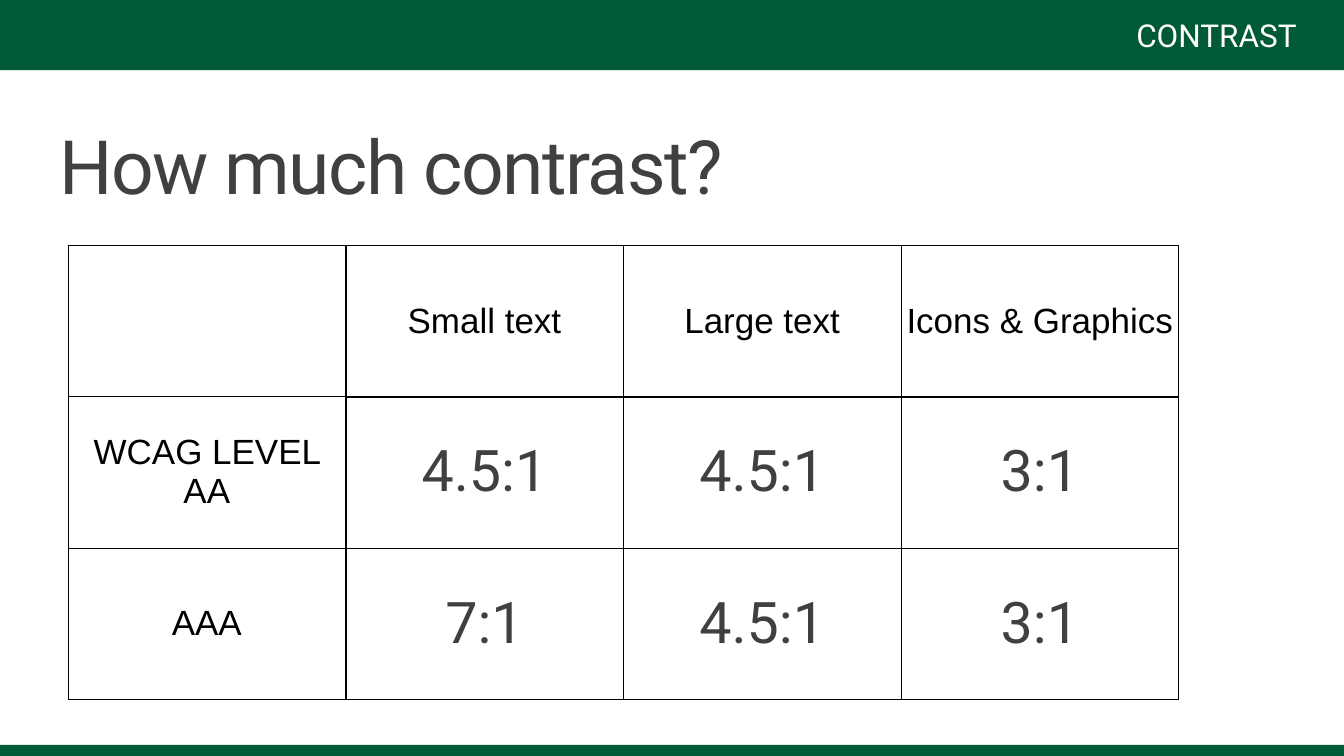
from lxml import etree
from pptx import Presentation
from pptx.dml.color import RGBColor
from pptx.enum.shapes import MSO_SHAPE
from pptx.enum.text import MSO_ANCHOR, MSO_AUTO_SIZE, PP_ALIGN
from pptx.oxml.ns import qn
from pptx.util import Pt

RECT = MSO_SHAPE.RECTANGLE
MIDDLE = MSO_ANCHOR.MIDDLE
GROW = MSO_AUTO_SIZE.SHAPE_TO_FIT_TEXT
LEFT, CENTER = PP_ALIGN.LEFT, PP_ALIGN.CENTER

EMU_PER_PX = 9144
WIDTH, HEIGHT = 2667, 1500
COLORS = {"green": "005A38", "grey": "404040", "black": "000000", "white": "FFFFFF"}
FORMATS = {
    "title": {"name": "Roboto", "size": Pt(107), "color": "grey"},
    "section": {"name": "Roboto", "size": Pt(45), "color": "white"},
    "label": {"name": "Arial", "size": Pt(50), "color": "black"},
    "ratio": {"name": "Roboto", "size": Pt(82), "color": "grey"},
}
ROWS = [
    ["", "Small text", "Large text", "Icons & Graphics"],
    ["WCAG LEVEL AA", "4.5:1", "4.5:1", "3:1"],
    ["AAA", "7:1", "4.5:1", "3:1"],
]


def px(value):
    return value * EMU_PER_PX


def rgb(name):
    return RGBColor.from_string(COLORS[name])


class SlideBuilder:
    margin = 6
    thin, thick = Pt(1), Pt(3)

    def __init__(self, prs):
        self.slide = prs.slides.add_slide(prs.slide_layouts[5])
        fill = self.slide.background.fill
        fill.solid()
        fill.fore_color.rgb = rgb("white")

    def set_margins(self, target):
        for side in ("left", "top", "right", "bottom"):
            setattr(target, f"margin_{side}", px(self.margin))

    def fill_text(self, tf, text, style, align):
        p = tf.paragraphs[0]
        p.alignment = align
        if text:
            r = p.add_run()
            r.text = text
            for key, value in FORMATS[style].items():
                if key == "color":
                    r.font.color.rgb = rgb(value)
                else:
                    setattr(r.font, key, value)
        return p

    def frame(self, sp, wrap):
        tf = sp.text_frame
        self.set_margins(tf)
        tf.auto_size = GROW
        tf.word_wrap = wrap
        tf.vertical_anchor = MIDDLE
        return tf

    def bar(self, x, y, w, h):
        sp = self.slide.shapes.add_shape(RECT, px(x), px(y), px(w), px(h))
        sp.shadow.inherit = False
        sp.fill.solid()
        sp.fill.fore_color.rgb = rgb("green")
        sp.line.fill.background()

    def title(self, text, x, y, w, h):
        sp = self.slide.shapes.title
        sp.left, sp.top, sp.width, sp.height = map(px, (x, y, w, h))
        p = self.fill_text(self.frame(sp, True), text, "title", LEFT)
        p.line_spacing = 0.8
        p.runs[0].font._element.set("spc", "-210")

    def text(self, text, x, y, w, h):
        sp = self.slide.shapes.add_textbox(px(x), px(y), px(w), px(h))
        self.fill_text(self.frame(sp, False), text, "section", CENTER)

    def borders(self, cell, widths):
        tc_pr = cell._tc.get_or_add_tcPr()
        for side, width in widths.items():
            ln = etree.SubElement(tc_pr, qn(f"a:ln{side}"), w=str(width))
            fill = etree.SubElement(ln, qn("a:solidFill"))
            etree.SubElement(fill, qn("a:srgbClr"), val=COLORS["black"])

    def table(self, rows, x, y, col_w, row_h):
        n_rows, n_cols = len(rows), len(rows[0])
        table = self.slide.shapes.add_table(
            n_rows, n_cols, px(x), px(y), px(col_w * n_cols), px(row_h * n_rows)
        ).table
        table.first_row = table.horz_banding = False
        for col in table.columns:
            col.width = px(col_w)
        for i, row in enumerate(rows):
            table.rows[i].height = px(row_h)
            for j, text in enumerate(row):
                cell = table.cell(i, j)
                self.set_margins(cell)
                cell.vertical_anchor = MIDDLE
                style = "ratio" if i and j else "label"
                self.fill_text(cell.text_frame, text, style, CENTER)
                self.borders(cell, {
                    "L": self.thick if j == 1 else self.thin,
                    "R": self.thick if j == 0 else self.thin,
                    "T": self.thick if i == 1 and j else self.thin,
                    "B": self.thick if i == 0 and j else self.thin,
                })
                cell.fill.background()


def main():
    prs = Presentation()
    prs.slide_width, prs.slide_height = px(WIDTH), px(HEIGHT)
    s = SlideBuilder(prs)
    s.bar(0, 0, WIDTH, 139)
    s.bar(0, 1478, WIDTH, HEIGHT - 1478)
    s.title("How much contrast?", 112, 248, 2322, 192)
    s.text("CONTRAST", 2241, 26, 346, 86)
    s.table(ROWS, 135, 487, 551, 300)
    prs.save("out.pptx")


if __name__ == "__main__":
    main()
